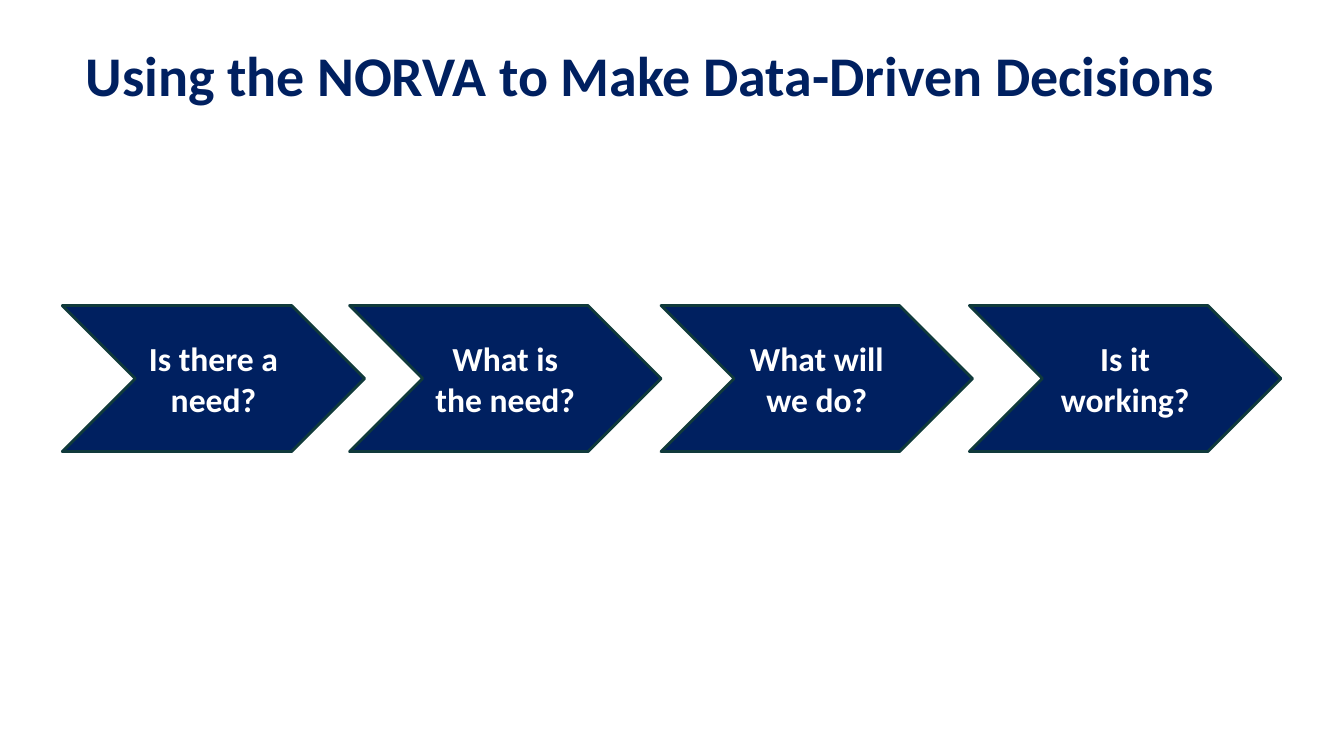
from pptx import Presentation
from pptx.dml.color import RGBColor
from pptx.enum.shapes import MSO_SHAPE as Shape
from pptx.enum.text import MSO_ANCHOR as Anchor, PP_ALIGN as Align
from pptx.util import Cm, Pt

NAVY = RGBColor(0x00, 0x20, 0x60)
DARK_GREEN = RGBColor(0x10, 0x3A, 0x3B)
WHITE = RGBColor(0xFF, 0xFF, 0xFF)


def write_text(shape, text, size, color, line_spacing):
    frame = shape.text_frame
    frame.word_wrap = True
    frame.vertical_anchor = Anchor.MIDDLE
    para = frame.paragraphs[0]
    para.alignment = Align.CENTER
    para.line_spacing = line_spacing
    span = para.add_run()
    span.text = text
    font_format = {"name": "Calibri", "size": Pt(size), "bold": True}
    for name, value in font_format.items():
        setattr(span.font, name, value)
    span.font.color.rgb = color


deck = Presentation()
deck.slide_width, deck.slide_height = Cm(33.87), Cm(19.05)
page = deck.slides.add_slide(deck.slide_layouts[5])

# Title
title = page.shapes.title
title_place = {"left": 0.81, "top": 0.25, "width": 31.14, "height": 3.43}
for name, value in title_place.items():
    setattr(title, name, Cm(value))
write_text(title, "Using the NORVA to Make Data-Driven Decisions", 40, NAVY, 0.9)

# Chain of questions: text, left, width
questions = [
    ("Is there a need?", 1.57, 7.62),
    ("What is the need?", 8.81, 7.85),
    ("What will we do?", 16.66, 7.85),
    ("Is it working?", 24.43, 7.85),
]
for question, left, width in questions:
    chevron = page.shapes.add_shape(
        Shape.CHEVRON, Cm(left), Cm(7.7), Cm(width), Cm(3.68))
    chevron.shadow.inherit = False
    chevron.fill.solid()
    chevron.fill.fore_color.rgb = NAVY
    chevron.line.color.rgb = DARK_GREEN
    chevron.line.width = Pt(2)
    write_text(chevron, question, 24, WHITE, 1.0)

deck.save("out.pptx")
